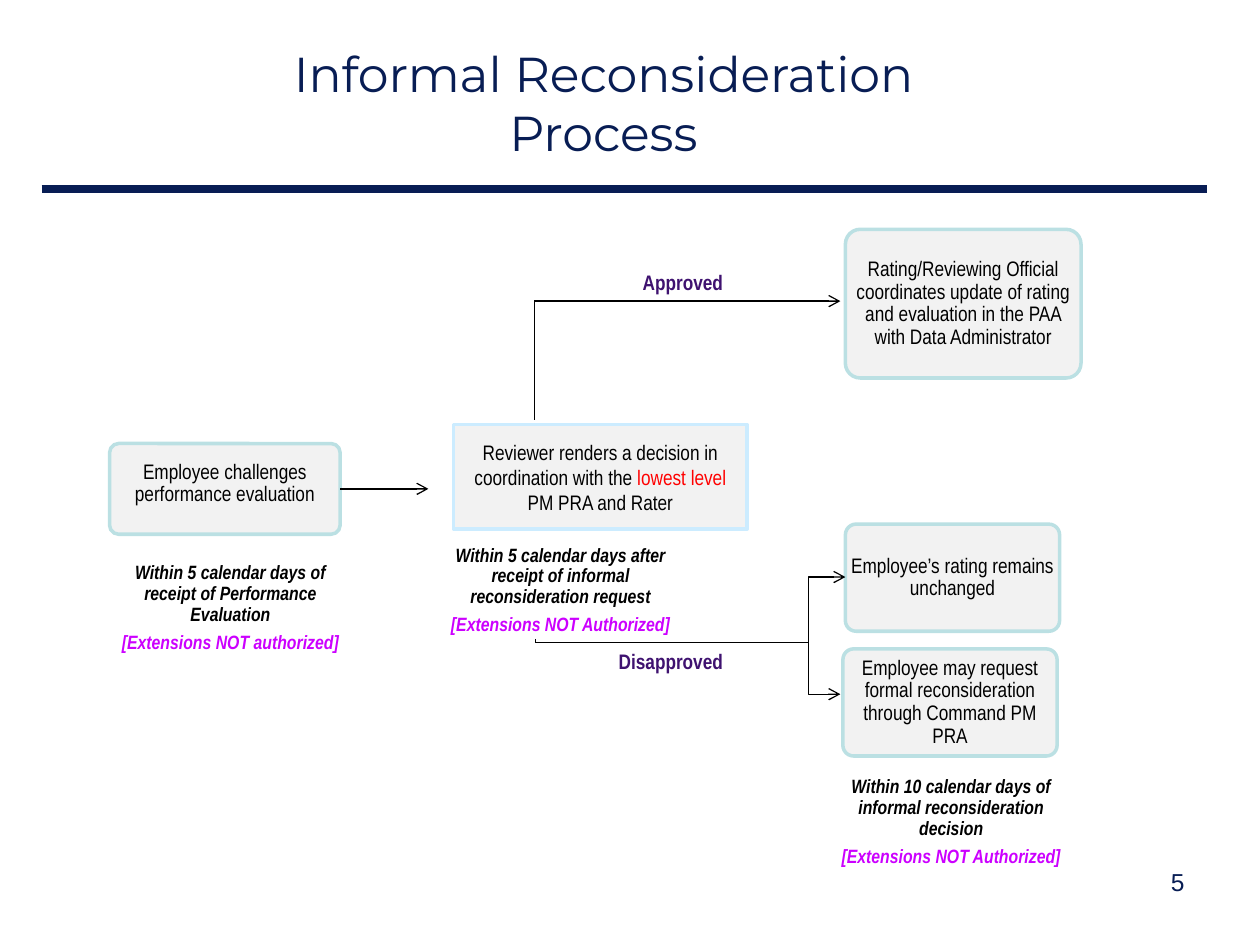
from lxml.etree import SubElement
from pptx import Presentation
from pptx.dml.color import RGBColor
from pptx.enum.shapes import MSO_CONNECTOR, MSO_SHAPE
from pptx.enum.text import MSO_ANCHOR, PP_ALIGN
from pptx.oxml.ns import qn
from pptx.util import Inches, Pt

COLORS = {
    "navy": "081D54",
    "black": "000000",
    "white": "FFFFFF",
    "card": "F2F2F2",
    "card_border": "BBE0E3",
    "review_border": "CCECFF",
    "outcome": "3F1270",
    "extension": "CC00FF",
    "emphasis": "FF0000",
}


def color(name):
    return RGBColor.from_string(COLORS[name])


def write_text(shape, paragraphs, size=12, font="Arial Narrow", bold=False,
               italic=False, align=PP_ALIGN.CENTER, anchor=MSO_ANCHOR.TOP,
               line_spacing=None, space_after=None, insets=(0.1, 0.05, 0.1, 0.05)):
    """Write paragraphs, each a list of (text, color name) runs; insets are inches."""
    frame = shape.text_frame
    frame.word_wrap = True
    frame.vertical_anchor = anchor
    (frame.margin_left, frame.margin_top,
     frame.margin_right, frame.margin_bottom) = map(Inches, insets)
    for index, runs in enumerate(paragraphs):
        paragraph = frame.add_paragraph() if index else frame.paragraphs[0]
        paragraph.alignment = align
        if line_spacing:
            paragraph.line_spacing = line_spacing
        if space_after:
            paragraph.space_after = Pt(space_after)
        for text, color_name in runs:
            run = paragraph.add_run()
            run.text = text
            run.font.size = Pt(size)
            run.font.name = font
            run.font.bold = bold
            run.font.italic = italic
            run.font.color.rgb = color(color_name)


def add_box(slide, kind, box, fill=None, border=None, corner=None):
    shape = slide.shapes.add_shape(kind, *map(Inches, box))
    shape.shadow.inherit = False
    if corner:
        shape.adjustments[0] = corner
    if fill:
        shape.fill.solid()
        shape.fill.fore_color.rgb = color(fill)
    else:
        shape.fill.background()
    if border:
        shape.line.color.rgb = color(border)
        shape.line.width = Pt(2)
    else:
        shape.line.fill.background()
    return shape


def add_label(slide, box, text, color_name, **text_format):
    label = slide.shapes.add_textbox(*map(Inches, box))
    write_text(label, [[(text, color_name)]], **text_format)


def add_card(slide, box, text, insets=(0.01, 0.01, 0.01, 0.01)):
    card = add_box(slide, MSO_SHAPE.ROUNDED_RECTANGLE, box, "card", "card_border", 0.1)
    write_text(card, [[(text, "black")]], anchor=MSO_ANCHOR.MIDDLE,
               line_spacing=0.9, insets=insets)
    return card


def add_deadline(slide, box, deadline, extension):
    note = add_box(slide, MSO_SHAPE.ROUNDED_RECTANGLE, box)
    write_text(note, [[(deadline, "black")], [(extension, "extension")]], size=11,
               bold=True, italic=True, line_spacing=0.9, space_after=4)


def add_line(slide, start, end, kind=MSO_CONNECTOR.STRAIGHT, width=0.75,
             line_color="black", arrows=()):
    """Draw a connector; arrows names the ends with a head (headEnd, tailEnd)."""
    connector = slide.shapes.add_connector(kind, *map(Inches, start + end))
    connector.line.width = Pt(width)
    connector.line.color.rgb = color(line_color)
    outline = connector.line._get_or_add_ln()
    for arrow in arrows:
        SubElement(outline, qn(f"a:{arrow}"), type="arrow")
    SubElement(connector._element.spPr, qn("a:effectLst"))
    return connector


def add_header(slide, box):
    left, top, width, height = box
    title = slide.shapes.title
    title.left, title.top = Inches(left + 1.5), Inches(top)
    title.width, title.height = Inches(5.92), Inches(1.22)
    write_text(title, [[("Informal Reconsideration Process", "navy")]], size=28,
               font="Montserrat", anchor=MSO_ANCHOR.MIDDLE)
    bottom = top + height
    add_line(slide, (left, bottom), (left + width, bottom), width=4.5, line_color="navy")


def add_challenge_step(slide, box):
    left, top, width, height = box
    card = add_card(slide, box, "Employee challenges performance evaluation",
                    (0.02, 0.01, 0.02, 0.09))
    middle = top + height / 2
    arrow = add_line(slide, (left + width, middle), (3.4, middle), arrows=["tailEnd"])
    arrow.begin_connect(card, 3)
    add_deadline(slide, (left - 0.07, top + 0.86, 2.06, 0.81),
                 "Within 5 calendar days of receipt of Performance Evaluation",
                 "[Extensions NOT authorized]")


def add_review_step(slide, box):
    left, top, width, height = box
    review = add_box(slide, MSO_SHAPE.RECTANGLE, box, "card", "review_border")
    write_text(review, [[("Reviewer renders a decision in coordination with the ", "black"),
                         ("lowest level ", "emphasis"),
                         ("PM PRA and Rater", "black")]], anchor=MSO_ANCHOR.MIDDLE)
    add_deadline(slide, (left - 0.28, top + height + 0.04, 2.26, 0.83),
                 "Within 5 calendar days after receipt of informal reconsideration request",
                 "[Extensions NOT Authorized]")


def add_approved_branch(slide, box):
    left, top, width, height = box
    add_line(slide, (left, top + height), (left, top))
    add_line(slide, (left, top), (left + width, top), arrows=["tailEnd"])
    add_label(slide, (left + 0.67, top - 0.3, 1.02, 0.3), "Approved", "outcome", bold=True)
    add_card(slide, (left + width + 0.04, top - 0.57, 1.87, 1.18),
             "Rating/Reviewing Official coordinates update of rating and evaluation "
             "in the PAA with Data Administrator")


def add_disapproved_branch(slide, box):
    left, top, width, height = box
    fork = left + width
    add_line(slide, (left, top - height), (left, top))
    add_line(slide, (left, top), (fork, top))
    add_label(slide, (left + 0.51, top, 1.13, 0.3), "Disapproved", "outcome", bold=True)
    add_card(slide, (fork + 0.29, top - 0.94, 1.7, 0.85),
             "Employee’s rating remains unchanged")
    add_card(slide, (fork + 0.27, top + 0.05, 1.7, 0.85),
             "Employee may request formal reconsideration through Command PM PRA",
             (0.06, 0.01, 0.06, 0.01))
    start, end = (fork + 0.29, top - 0.52), (fork + 0.25, top + 0.41)
    bracket = add_line(slide, start, end, MSO_CONNECTOR.ELBOW,
                       arrows=["headEnd", "tailEnd"])
    bend = round((start[0] - fork) / (start[0] - end[0]) * 100000)
    geometry = bracket._element.spPr.find(qn("a:prstGeom"))
    SubElement(geometry.find(qn("a:avLst")), qn("a:gd"), name="adj1", fmla=f"val {bend}")
    add_deadline(slide, (fork, top + 0.98, 2.26, 0.79),
                 "Within 10 calendar days of informal reconsideration decision",
                 "[Extensions NOT Authorized]")


def main():
    presentation = Presentation()
    presentation.slide_width, presentation.slide_height = Inches(10), Inches(7.5)
    slide = presentation.slides.add_slide(presentation.slide_layouts[5])
    add_header(slide, (0.33, 0.2, 9.25, 1.3))
    add_challenge_step(slide, (0.87, 3.52, 1.83, 0.72))
    add_review_step(slide, (3.6, 3.37, 2.33, 0.83))
    add_approved_branch(slide, (4.24, 2.39, 2.43, 0.94))
    add_disapproved_branch(slide, (4.25, 5.1, 2.17, 0.03))
    add_label(slide, (7.17, 6.83, 2.33, 0.52), "5", "navy", size=14, font="Arial",
              align=PP_ALIGN.RIGHT)
    presentation.save("out.pptx")


if __name__ == "__main__":
    main()
